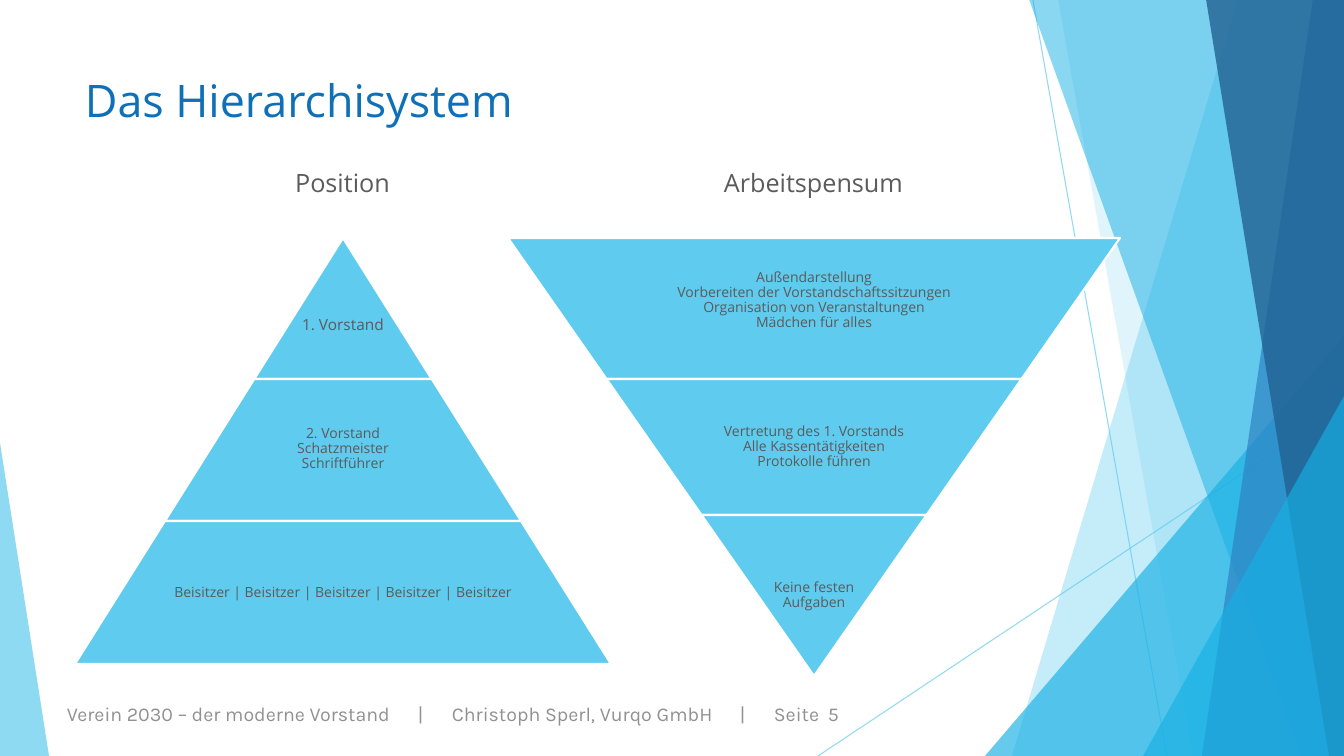
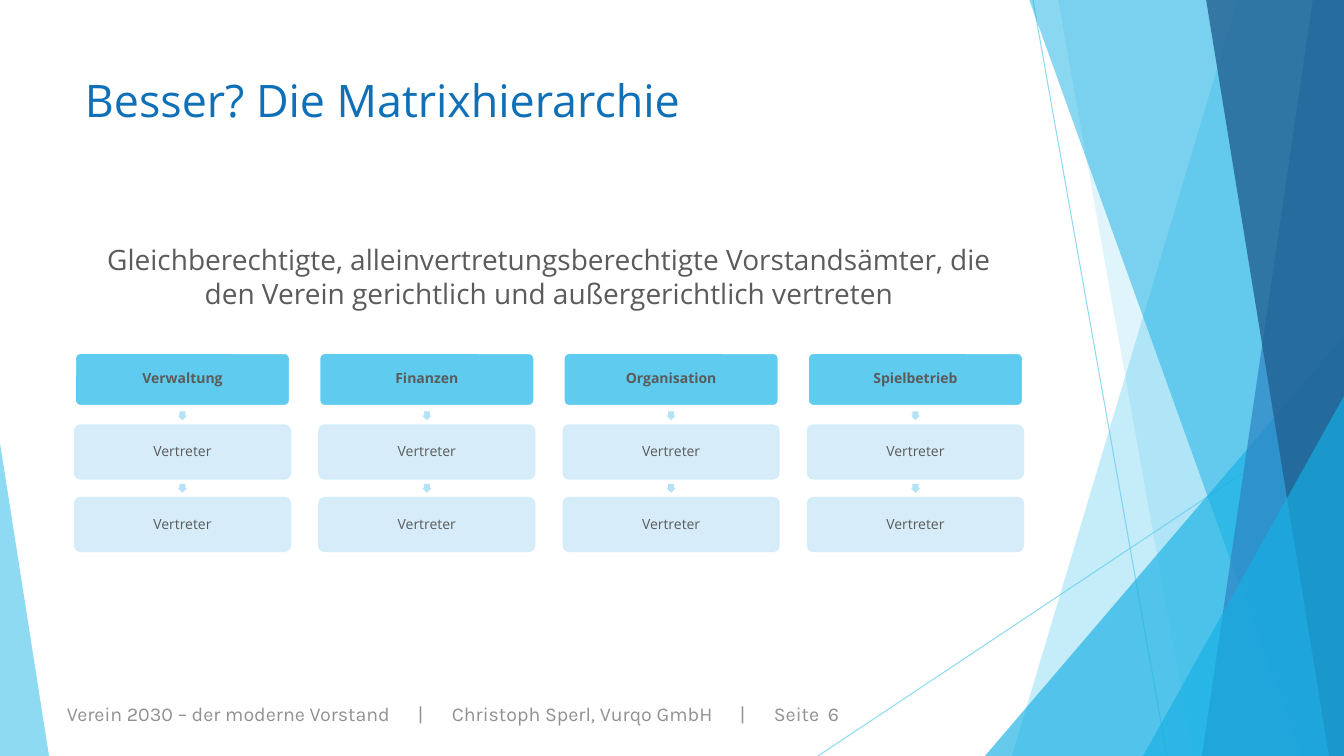
from lxml.etree import SubElement
from pptx import Presentation
from pptx.dml.color import RGBColor
from pptx.enum.shapes import MSO_CONNECTOR, MSO_SHAPE
from pptx.enum.text import MSO_ANCHOR, PP_ALIGN
from pptx.oxml.ns import qn
from pptx.util import Pt

EMU_PER_PX = 914400 / 100.8
SKY = RGBColor(0x5F, 0xCB, 0xEF)
CYAN = RGBColor(0x17, 0xB0, 0xE4)
BLUE = RGBColor(0x2E, 0x83, 0xC3)
NAVY = RGBColor(0x22, 0x62, 0x92)
PALE = RGBColor(0xD2, 0xEC, 0xF9)
ARROW = RGBColor(0xB6, 0xE2, 0xF6)
WHITE = RGBColor(0xFF, 0xFF, 0xFF)
TITLE = RGBColor(0x0F, 0x70, 0xB7)
TEXT = RGBColor(0x5B, 0x5B, 0x5B)
GREY = RGBColor(0x91, 0x91, 0x91)
BODY_FONT = "Open Sans"
FOOTER_FONT = "Karla"
WIDTH, HEIGHT = 1344, 756
TITLE_BOX = (75, 68, 948, 145)
FOOTER_BOX = (57, 697, 1044, 34)
FOOTER_TABS = (351, 385, 673, 707, 761)


def px(n):
    return round(n * EMU_PER_PX)


def set_alpha(sp, percent):
    for clr in sp.element.iter(qn("a:srgbClr")):
        SubElement(clr, qn("a:alpha"), val=str(percent * 1000))


def paint(sp, fill, line=None, alpha=100):
    sp.shadow.inherit = False
    sp.fill.solid()
    sp.fill.fore_color.rgb = fill
    if line is None:
        sp.line.fill.background()
    else:
        sp.line.color.rgb = line
        sp.line.width = Pt(1.5)
    if alpha < 100:
        set_alpha(sp, alpha)


def add_preset(slide, preset, box, fill, adj=(), line=None, alpha=100):
    sp = slide.shapes.add_shape(preset, *map(px, box))
    for i, value in enumerate(adj):
        sp.adjustments[i] = value
    paint(sp, fill, line, alpha)
    return sp


def write(tf, text, size, color=TEXT, font=BODY_FONT, align=PP_ALIGN.CENTER,
          bold=False, tabs=()):
    tf.word_wrap = True
    p = tf.paragraphs[0]
    p.text = text
    p.alignment = align
    if tabs:
        tab_list = SubElement(p._p.get_or_add_pPr(), qn("a:tabLst"))
        for tab in tabs:
            SubElement(tab_list, qn("a:tab"), pos=str(px(tab)), algn="l")
    p.font.name = font
    p.font.size = Pt(size)
    p.font.bold = bold
    p.font.color.rgb = color
    return p


def write_label(tf, text, size=10, bold=False):
    tf.margin_left = tf.margin_right = tf.margin_top = tf.margin_bottom = px(1)
    tf.vertical_anchor = MSO_ANCHOR.MIDDLE
    write(tf, text, size, bold=bold).line_spacing = 0.9


def add_text(slide, box, text, size, **style):
    tf = slide.shapes.add_textbox(*map(px, box)).text_frame
    write(tf, text, size, **style)


def add_ray(slide, start, end):
    ray = slide.shapes.add_connector(MSO_CONNECTOR.STRAIGHT, *map(px, start + end))
    ray.line.color.rgb = SKY
    ray.line.width = Pt(0.75)
    set_alpha(ray, 70)
    SubElement(ray.element.spPr, qn("a:effectLst"))


def add_pane(slide, top_x, bottom_x, fill, alpha):
    builder = slide.shapes.build_freeform(top_x, -1, scale=EMU_PER_PX)
    builder.add_line_segments([(WIDTH, -1), (WIDTH, HEIGHT), (bottom_x, HEIGHT)])
    paint(builder.convert_to_shape(), fill, alpha=alpha)


def add_wedge(slide, left, top, width, fill, apex, alpha):
    box = (left, top, width, HEIGHT - top)
    add_preset(slide, MSO_SHAPE.ISOSCELES_TRIANGLE, box, fill, (apex,), alpha=alpha)


def add_backdrop(slide):
    add_ray(slide, (1033, 0), (1167, HEIGHT))
    add_ray(slide, (WIDTH, 406), (818, HEIGHT))
    add_pane(slide, 1238, 1012, SKY, 36)
    add_pane(slide, 1058, 1193, SKY, 20)
    add_wedge(slide, 985, 336, 359, CYAN, 1, 66)
    add_pane(slide, 1029, 1301, CYAN, 50)
    add_pane(slide, 1313, 1202, BLUE, 70)
    add_pane(slide, 1206, 1329, NAVY, 80)
    add_wedge(slide, 1143, 396, 201, CYAN, 1, 66)
    add_wedge(slide, 0, 443, 49, SKY, 0, 70)


def add_base(prs, title, number):
    slide = prs.slides.add_slide(prs.slide_layouts[6])
    add_backdrop(slide)
    footer = ("Verein 2030 – der moderne Vorstand\t|\t"
              f"Christoph Sperl, Vurqo GmbH\t|\tSeite\t{number}")
    add_text(slide, FOOTER_BOX, footer, 14, color=GREY, font=FOOTER_FONT,
             align=PP_ALIGN.LEFT, tabs=FOOTER_TABS)
    add_text(slide, TITLE_BOX, title, 32, color=TITLE, align=PP_ALIGN.LEFT)
    return slide


def add_pyramid(slide, box, tiers, inverted=False):
    left, top, width, height = box
    y = top
    for tier_height, text, size, shift in tiers:
        base = top + height - y if inverted else y + tier_height - top
        tier_width = width * base / height
        x = left + (width - tier_width) / 2
        tier = add_preset(slide, MSO_SHAPE.TRAPEZOID, (x, y, tier_width, tier_height),
                          SKY, (width / height / 2,), WHITE)
        tier.rotation = 180 if inverted else 0
        label = slide.shapes.add_textbox(
            *map(px, (left, y + shift, width, tier_height)))
        write_label(label.text_frame, text, size)
        y += tier_height


def add_matrix(slide, box, headings, deputies, cell_width, cell_height):
    left, top, width, height = box
    x_step = (width - cell_width) / (len(headings) - 1)
    y_step = (height - cell_height) / len(deputies)
    arrow = 9
    for col, heading in enumerate(headings):
        x = left + col * x_step
        for row, text in enumerate([heading, *deputies]):
            y = top + row * y_step
            is_head = row == 0
            if not is_head:
                arrow_y = y - (y_step - cell_height + arrow) / 2
                add_preset(slide, MSO_SHAPE.DOWN_ARROW,
                           (x + (cell_width - arrow) / 2, arrow_y, arrow, arrow),
                           ARROW, (0.67, 0.5))
            fill, line, alpha = (SKY, WHITE, 100) if is_head else (PALE, PALE, 90)
            cell = add_preset(slide, MSO_SHAPE.ROUNDED_RECTANGLE,
                              (x, y, cell_width, cell_height), fill, (0.1,), line, alpha)
            write_label(cell.text_frame, text, bold=is_head)


def build_hierarchy(prs):
    slide = add_base(prs, "Das Hierarchisystem", 5)
    add_pyramid(slide, (75, 238, 536, 426), [
        (141, "1. Vorstand", 11, 17),
        (142, "2. Vorstand\nSchatzmeister\nSchriftführer", 10, -1),
        (143, " | ".join(["Beisitzer"] * 5), 10, 0),
    ])
    add_pyramid(slide, (508, 238, 612, 438), [
        (141, "Außendarstellung\nVorbereiten der Vorstandschaftssitzungen\n"
              "Organisation von Veranstaltungen\nMädchen für alles", 10, -8),
        (136, "Vertretung des 1. Vorstands\nAlle Kassentätigkeiten\n"
              "Protokolle führen", 10, 0),
        (161, "Keine festen\nAufgaben", 10, 0),
    ], inverted=True)
    for left, heading in ((234, "Position"), (705, "Arbeitspensum")):
        add_text(slide, (left, 162, 217, 41), heading, 18)


def build_matrix(prs):
    slide = add_base(prs, "Besser? Die Matrixhierarchie", 6)
    add_matrix(slide, (75, 353, 948, 198),
               ["Verwaltung", "Finanzen", "Organisation", "Spielbetrieb"],
               ["Vertreter"] * 2, 215, 53)
    add_text(slide, (75, 238, 948, 78),
             "Gleichberechtigte, alleinvertretungsberechtigte Vorstandsämter, "
             "die den Verein gerichtlich und außergerichtlich vertreten", 20)


def main():
    prs = Presentation()
    prs.slide_width, prs.slide_height = px(WIDTH), px(HEIGHT)
    build_hierarchy(prs)
    build_matrix(prs)
    prs.save("out.pptx")


if __name__ == "__main__":
    main()
